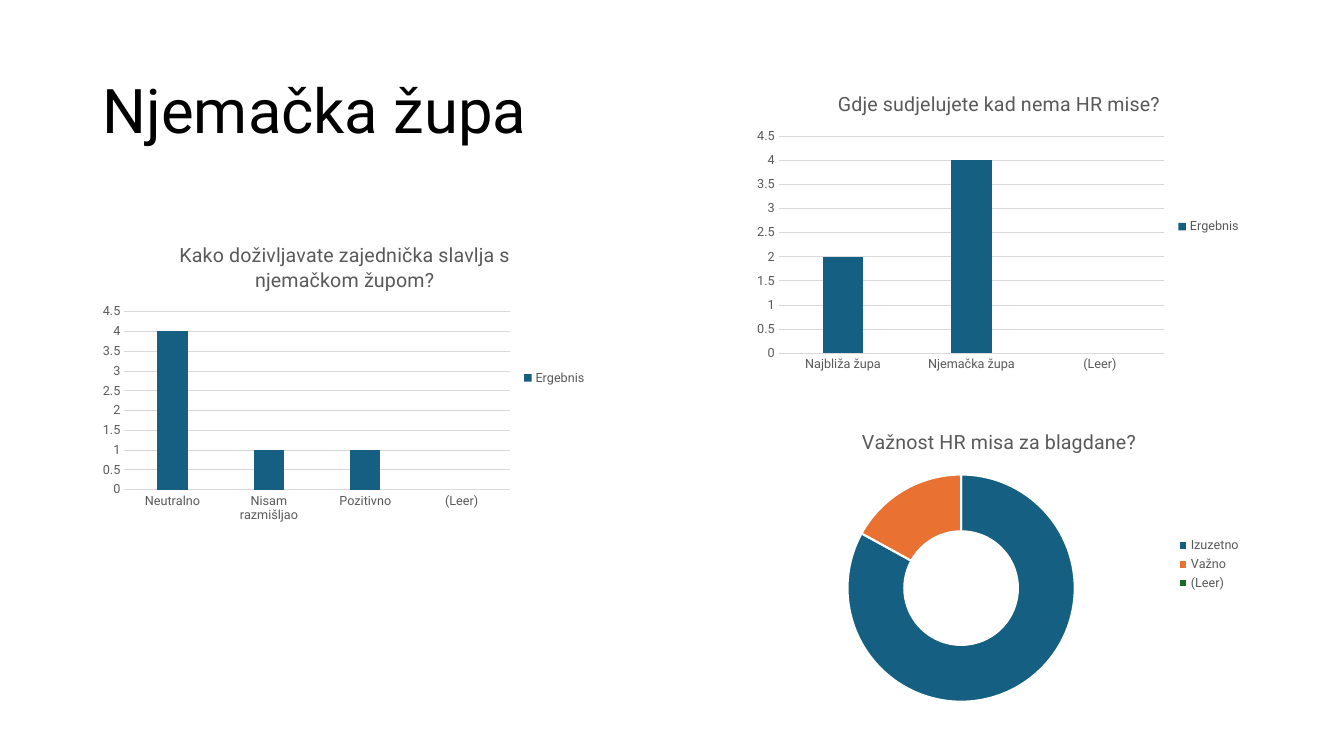
import pptx
import pptx.chart.data
import pptx.dml.color
import pptx.enum.chart
import pptx.enum.text
import pptx.util

FONT = "Roboto"
BLACK, GREY, GRID, WHITE = "000000", "595959", "D9D9D9", "FFFFFF"
ACCENTS = ["156082", "E97132", "196B24"]

WIDTH, HEIGHT = 13.33, 7.5
MARGIN = 0.92
CHART_WIDTH, CHART_HEIGHT = 5, 3
RIGHT_COLUMN = WIDTH - MARGIN - CHART_WIDTH

TITLE = "Njemačka župa"
COLUMN_CHARTS = [
    {
        "title": "Kako doživljavate zajednička slavlja s njemačkom župom?",
        "values": {"Neutralno": 4, "Nisam razmišljao": 1, "Pozitivno": 1, "(Leer)": None},
        "left": MARGIN,
        "top": 0.3 * HEIGHT,
    },
    {
        "title": "Gdje sudjelujete kad nema HR mise?",
        "values": {"Najbliža župa": 2, "Njemačka župa": 4, "(Leer)": None},
        "left": RIGHT_COLUMN,
        "top": 0.1 * HEIGHT,
    },
]
DOUGHNUT = {
    "title": "Važnost HR misa za blagdane?",
    "values": {"Izuzetno": 83, "Važno": 17, "(Leer)": None},
    "left": RIGHT_COLUMN,
    "top": 4.1,
}


def color(hex_string):
    return pptx.dml.color.RGBColor.from_string(hex_string)


def set_font(font, size, hex_string):
    font.name = FONT
    font.size = pptx.util.Pt(size)
    font.bold = False
    font.color.rgb = color(hex_string)


def set_fill(fill, hex_string):
    fill.solid()
    fill.fore_color.rgb = color(hex_string)


def set_line(line, hex_string, width):
    set_fill(line.fill, hex_string)
    line.width = pptx.util.Pt(width)


def add_title(slide):
    box = slide.shapes.add_textbox(
        *map(pptx.util.Inches, (MARGIN, 0.4, WIDTH - 2 * MARGIN, 1.45)))
    frame = box.text_frame
    frame.word_wrap = True
    frame.vertical_anchor = pptx.enum.text.MSO_ANCHOR.MIDDLE
    para = frame.paragraphs[0]
    para.text = TITLE
    para.line_spacing = 0.9
    set_font(para.font, 44, BLACK)


def add_chart(slide, content, kind, series_name):
    """Add a chart with its title and right-hand legend."""
    data = pptx.chart.data.CategoryChartData()
    data.categories = list(content["values"])
    data.add_series(series_name, list(content["values"].values()))
    place = (content["left"], content["top"], CHART_WIDTH, CHART_HEIGHT)
    chart = slide.shapes.add_chart(kind, *map(pptx.util.Inches, place), data).chart
    set_font(chart.font, 10, BLACK)

    chart.has_title = True
    para = chart.chart_title.text_frame.paragraphs[0]
    para.text = content["title"]
    set_font(para.font, 14, GREY)
    chart.chart_title.include_in_layout = False

    chart.has_legend = True
    chart.legend.position = pptx.enum.chart.XL_LEGEND_POSITION.RIGHT
    chart.legend.include_in_layout = False
    set_font(chart.legend.font, 9, GREY)
    return chart


def add_column_chart(slide, content):
    chart = add_chart(
        slide, content, pptx.enum.chart.XL_CHART_TYPE.COLUMN_CLUSTERED, "Ergebnis")
    plot = chart.plots[0]
    plot.vary_by_categories = False
    plot.gap_width = 219
    plot.overlap = -27
    set_fill(plot.series[0].format.fill, ACCENTS[0])
    for axis in (chart.category_axis, chart.value_axis):
        axis.major_tick_mark = pptx.enum.chart.XL_TICK_MARK.NONE
        axis.minor_tick_mark = pptx.enum.chart.XL_TICK_MARK.NONE
        set_font(axis.tick_labels.font, 9, GREY)
    set_line(chart.category_axis.format.line, GRID, 0.75)
    chart.value_axis.format.line.fill.background()
    set_line(chart.value_axis.major_gridlines.format.line, GRID, 0.75)


def add_doughnut(slide, content):
    chart = add_chart(
        slide, content, pptx.enum.chart.XL_CHART_TYPE.DOUGHNUT, "Series 1")
    plot = chart.plots[0]
    plot.vary_by_categories = True
    for index, accent in enumerate(ACCENTS):
        point = plot.series[0].points[index]
        set_fill(point.format.fill, accent)
        set_line(point.format.line, WHITE, 1.5)
    for hole in chart.element.xpath(".//c:holeSize"):
        hole.set("val", "75")


def main():
    deck = pptx.Presentation()
    deck.slide_width = pptx.util.Inches(WIDTH)
    deck.slide_height = pptx.util.Inches(HEIGHT)
    slide = deck.slides.add_slide(deck.slide_layouts[6])
    add_title(slide)
    for content in COLUMN_CHARTS:
        add_column_chart(slide, content)
    add_doughnut(slide, DOUGHNUT)
    deck.save("out.pptx")


if __name__ == "__main__":
    main()
